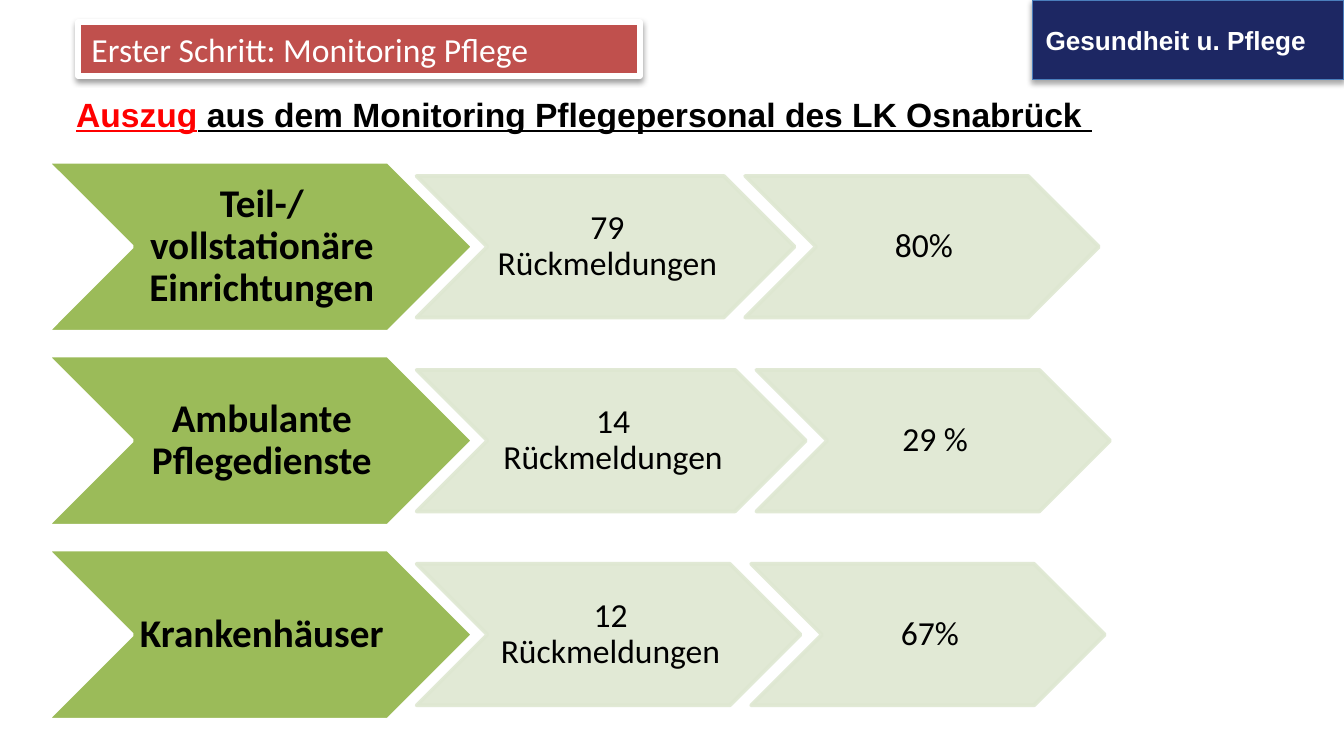
from dataclasses import dataclass

from lxml import etree
from pptx import Presentation
from pptx.dml.color import RGBColor
from pptx.enum import shapes, text
from pptx.oxml.ns import qn
from pptx.util import Pt


@dataclass(frozen=True)
class Theme:
    navy: str = "1D2763"
    navy_line: str = "4B7EBC"
    red_box: str = "C0504D"
    red: str = "FF0000"
    green: str = "9BBB59"
    pale: str = "DEE7D1"
    white: str = "FFFFFF"
    black: str = "000000"
    heading_font: str = "Arial"
    body_font: str = "Calibri"
    label_size: float = 14
    text_size: float = 18
    group_size: float = 21


def add_run(p, content, *, font, size, color, bold=False, underline=False):
    r = p.add_run()
    r.text = content
    f = r.font
    f.name, f.size, f.bold, f.underline = font, Pt(size), bold, underline
    f.color.rgb = RGBColor.from_string(color)


def set_alpha(fill_parent, percent):
    """Make the solid colour found below an XML element translucent."""
    color = fill_parent.find(qn("a:solidFill")).find(qn("a:srgbClr"))
    etree.SubElement(color, qn("a:alpha"), val=str(percent * 1000))


class SlideBuilder:
    def __init__(self, slide, theme):
        self.s = slide
        self.t = theme

    def frame(self, sp, margins=(7.2, 3.6, 7.2, 3.6), anchor=text.MSO_ANCHOR.TOP):
        tf = sp.text_frame
        tf.word_wrap = True
        tf.auto_size = text.MSO_AUTO_SIZE.NONE
        tf.vertical_anchor = anchor
        tf.margin_left, tf.margin_top, tf.margin_right, tf.margin_bottom = map(Pt, margins)
        return tf.paragraphs[0]

    def paint(self, sp, fill, line, width, alpha=None):
        sp.fill.solid()
        sp.fill.fore_color.rgb = RGBColor.from_string(fill)
        sp.line.color.rgb = RGBColor.from_string(line)
        sp.line.width = Pt(width)
        sp.shadow.inherit = False
        if alpha:
            spPr = sp._element.spPr
            set_alpha(spPr, alpha)
            set_alpha(spPr.find(qn("a:ln")), alpha)

    def drop_shadow(self, sp, blur, dist, alpha):
        effects = sp._element.spPr.find(qn("a:effectLst"))
        shadow = etree.SubElement(
            effects, qn("a:outerShdw"), blurRad=str(Pt(blur)), dist=str(Pt(dist)),
            dir="5400000", rotWithShape="0")
        color = etree.SubElement(shadow, qn("a:srgbClr"), val=self.t.black)
        etree.SubElement(color, qn("a:alpha"), val=str(alpha * 1000))

    def shape(self, kind, x, y, w, h):
        return self.s.shapes.add_shape(kind, Pt(x), Pt(y), Pt(w), Pt(h))

    def title(self, content, x, y, w, h):
        sp = self.s.shapes.title
        sp.left, sp.top, sp.width, sp.height = Pt(x), Pt(y), Pt(w), Pt(h)
        self.paint(sp, self.t.red_box, self.t.white, 3)
        self.drop_shadow(sp, 3.1, 1.6, 38)
        p = self.frame(sp)
        p.alignment = text.PP_ALIGN.LEFT
        add_run(p, content, font=self.t.body_font, size=self.t.text_size, color=self.t.white)

    def banner(self, x, y, w, h):
        sp = self.shape(shapes.MSO_SHAPE.RECTANGLE, x, y, w, h)
        self.paint(sp, self.t.navy, self.t.navy_line, 0.75)
        self.drop_shadow(sp, 3.1, 1.8, 35)

    def heading(self, parts, x, y, w, h, **style):
        """Add a bold text box from (text, colour) pairs."""
        sp = self.s.shapes.add_textbox(Pt(x), Pt(y), Pt(w), Pt(h))
        p = self.frame(sp)
        for content, color in parts:
            add_run(p, content, font=self.t.heading_font, color=color, bold=True, **style)

    def chevron(self, content, x, y, w, h, lead=False):
        t = self.t
        sp = self.shape(shapes.MSO_SHAPE.CHEVRON, x, y, w, h)
        if lead:
            self.paint(sp, t.green, t.white, 2)
        else:
            self.paint(sp, t.pale, t.pale, 2, alpha=90)
        p = self.frame(sp, (2, 0.8, 0, 0.8), text.MSO_ANCHOR.MIDDLE)
        p.alignment = text.PP_ALIGN.CENTER
        p.line_spacing = 0.9
        add_run(p, content, font=t.body_font, color=t.black, bold=lead,
                size=t.group_size if lead else t.text_size)


def main():
    prs = Presentation()
    prs.slide_width, prs.slide_height = Pt(720), Pt(405)
    t = Theme()
    b = SlideBuilder(prs.slides.add_slide(prs.slide_layouts[5]), t)

    b.banner(553, 0, 167, 42.5)
    b.heading([("Gesundheit u. Pflege", t.white)], 553, 9.4, 159, 24.5, size=t.label_size)
    b.heading([("Auszug", t.red), (" aus dem Monitoring Pflegepersonal des LK Osnabrück ", t.black)],
              33.8, 46.8, 571, 29, size=t.text_size, underline=True)
    b.title("Erster Schritt: Monitoring Pflege", 41.8, 11.8, 301, 29)

    # Group, responses, width of the responses chevron, share
    rows = [
        ("Teil-/ vollstationäre Einrichtungen", "79 Rückmeldungen", 202.5, "80%"),
        ("Ambulante Pflegedienste", "14 Rückmeldungen", 208.5, "29 %"),
        ("Krankenhäuser", "12 Rückmeldungen", 205.7, "67%"),
    ]
    top, pitch, lead_h, step_h = 86.6, 103.9, 91.2, 75.8
    lead_x, step_x, overlap = 25.2, 223.2, 26.5
    for i, (group, responses, width, share) in enumerate(rows):
        y = top + i * pitch
        step_y = y + (lead_h - step_h) / 2
        b.chevron(group, lead_x, y, 228.2, lead_h, lead=True)
        b.chevron(responses, step_x, step_y, width, step_h)
        b.chevron(share, step_x + width - overlap, step_y, 189.5, step_h)

    prs.save("out.pptx")


if __name__ == "__main__":
    main()
